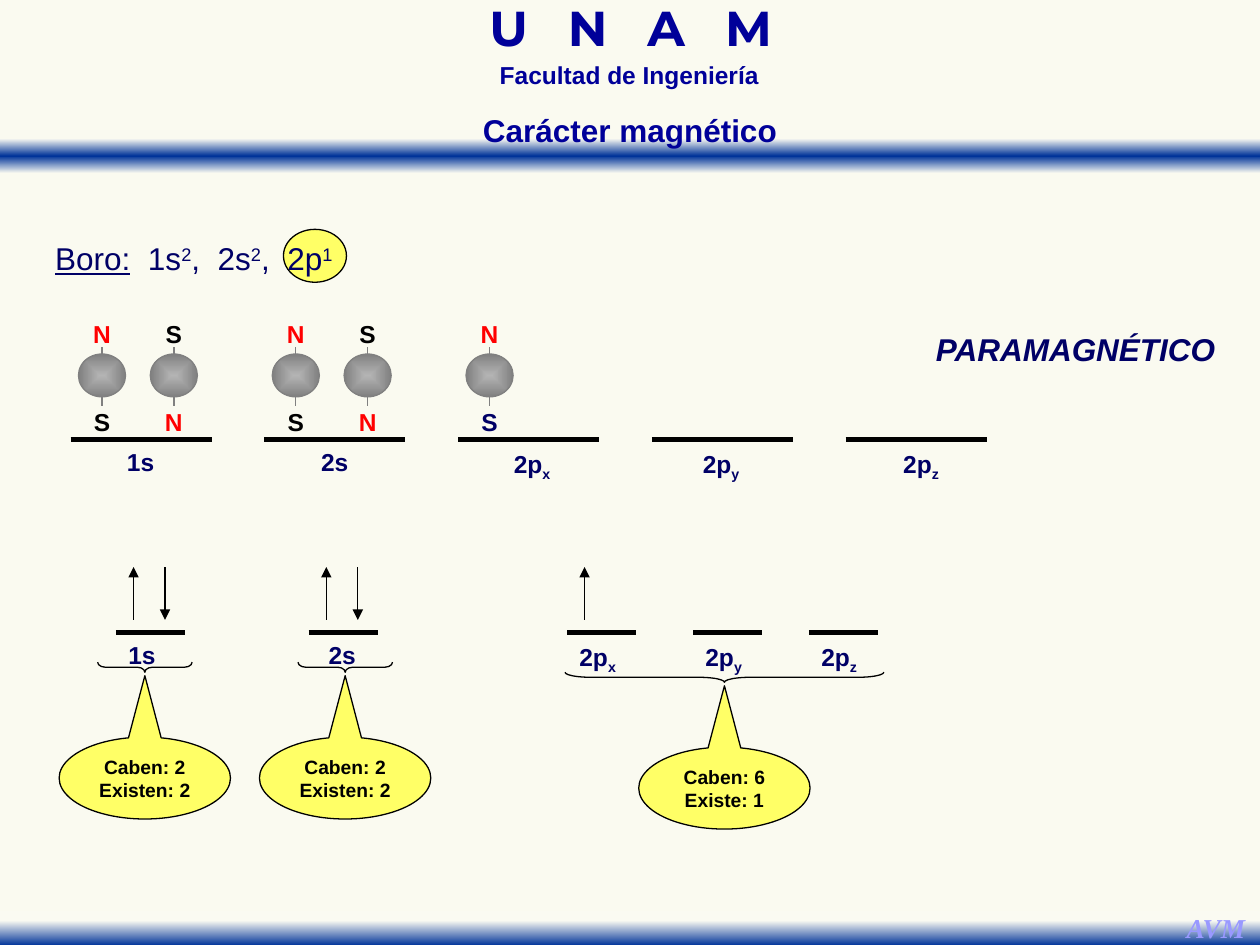
"""Build the slide on the magnetic character of boron, on a grid of 100 by 75 cells."""
from lxml import etree
from pptx import Presentation, util as u
from pptx.dml.color import RGBColor
from pptx.enum import shapes, text
from pptx.oxml.ns import qn

COLORS = {
    "paper": "FAFAF0", "fade": "FAFAF2", "band": "003399", "heading": "000099",
    "navy": "000066", "lilac": "9999FF", "yellow": "FFFF66", "black": "000000",
    "red": "FF0000", "light gray": "B4B4B4", "gray": "808080",
}
LEFT, CENTER = text.PP_ALIGN.LEFT, text.PP_ALIGN.CENTER
SUPER, SUB = {"baseline": "30000"}, {"baseline": "-25000"}
GAP = (" ", {"spc": "500"})


def cells(count):
    """Convert grid cells to a length."""
    return u.Inches(count / 10)


def color(name):
    """Look up a colour by name."""
    return RGBColor.from_string(COLORS[name])


def write(paragraph, runs, size, ink, font="Arial", bold=True, italic=False,
          align=LEFT, spacing=None):
    """Fill a paragraph with runs given as text and run attributes."""
    paragraph.alignment = align
    if spacing:
        paragraph.line_spacing = spacing
    for words, attributes in runs:
        run = paragraph.add_run()
        run.text = words
        for key, value in attributes.items():
            run.font._element.set(key, value)
    paragraph.font.name, paragraph.font.size = font, u.Pt(size)
    paragraph.font.bold, paragraph.font.italic = bold, italic
    paragraph.font.color.rgb = color(ink)


def add_text(slide, left, top, width, height, runs, size, ink, inset=1, **style):
    """Add a text box of one paragraph."""
    box = slide.shapes.add_textbox(*map(cells, (left, top, width, height)))
    frame = box.text_frame
    frame.word_wrap = True
    frame.margin_left = frame.margin_right = cells(inset)
    write(frame.paragraphs[0], runs, size, ink, **style)


def add_figure(slide, kind, left, top, width, height, fill=None, line=None):
    """Add a preset shape with a plain fill and a thin line."""
    shape = slide.shapes.add_shape(kind, *map(cells, (left, top, width, height)))
    shape.shadow.inherit = False
    if fill:
        shape.fill.solid()
        shape.fill.fore_color.rgb = color(fill)
    else:
        shape.fill.background()
    if line:
        shape.line.color.rgb = color(line)
        shape.line.width = u.Pt(0.75)
    else:
        shape.line.fill.background()
    return shape


def set_gradient(shape, stops, radial=False):
    """Replace a plain fill by a vertical or a centred gradient."""
    gradient = etree.Element(qn("a:gradFill"), rotWithShape="1")
    stop_list = etree.SubElement(gradient, qn("a:gsLst"))
    for position, name in stops:
        stop = etree.SubElement(stop_list, qn("a:gs"), pos=str(position * 1000))
        etree.SubElement(stop, qn("a:srgbClr"), val=COLORS[name])
    if radial:
        center = etree.SubElement(gradient, qn("a:path"), path="shape")
        etree.SubElement(center, qn("a:fillToRect"), l="50000", t="50000", r="50000", b="50000")
    else:
        etree.SubElement(gradient, qn("a:lin"), ang="5400000", scaled="1")
    properties = shape._element.spPr
    properties.replace(properties.find(qn("a:solidFill")), gradient)


def add_line(slide, start, end, width=0.75, ink="black", arrow=False):
    """Add a straight line, with an arrowhead at its end if asked."""
    line = slide.shapes.add_connector(
        shapes.MSO_CONNECTOR.STRAIGHT, *map(cells, (*start, *end)))
    line.line.color.rgb = color(ink)
    line.line.width = u.Pt(width)
    if arrow:
        etree.SubElement(line.line._get_or_add_ln(), qn("a:tailEnd"), type="triangle")
    etree.SubElement(line._element.spPr, qn("a:effectLst"))


def add_band(slide, top, stops):
    """Add a gradient band across the slide."""
    band = add_figure(slide, shapes.MSO_SHAPE.RECTANGLE, 0, top, 100, 2.75, "band")
    set_gradient(band, stops)


def add_orbital(slide, left, top, width, label_left, name):
    """Add an orbital's bar and its label, with the axis as a subscript."""
    add_line(slide, (left, top), (left + width, top), 3)
    add_text(slide, label_left, top - 1.1, 5.4, 4.5,
             [(name[:2], {}), (name[2:], SUB)], 14, "navy", spacing=1.5)


def add_magnet(slide, center, north_up, south_ink="black"):
    """Add an electron as a sphere with its two poles."""
    poles = [("N", "red"), ("S", south_ink)]
    if not north_up:
        poles.reverse()
    sphere = add_figure(slide, shapes.MSO_SHAPE.OVAL, center - 1.87, 28.1, 3.74, 3.4,
                        "gray", "gray")
    set_gradient(sphere, [(0, "light gray"), (100, "gray")], radial=True)
    for (pole, ink), edge, tip, top in zip(poles, (28.1, 31.5), (27.5, 32.2), (24.8, 31.8)):
        add_line(slide, (center, edge), (center, tip), ink="gray")
        add_text(slide, center - 1.5, top, 3, 3.3, [(pole, {})], 14, ink,
                 inset=0, align=CENTER)


def add_occupancy(slide, center, top, span, capacity, present):
    """Add a brace under orbitals and a callout with their electron count."""
    brace = add_figure(slide, shapes.MSO_SHAPE.LEFT_BRACE, center - 0.4,
                       top - 5.55 - span / 2, 0.8, span, line="black")
    brace.rotation = 270
    brace.adjustments[0], brace.adjustments[1] = span / 10, 0.5
    callout = add_figure(slide, shapes.MSO_SHAPE.OVAL_CALLOUT, center - 6.8, top,
                         13.6, 6.5, "yellow", "black")
    callout.adjustments[0], callout.adjustments[1] = 0, -1.25
    paragraph = callout.text_frame.paragraphs[0]
    write(paragraph, [(capacity, {})], 11, "black", align=CENTER)
    paragraph.add_line_break()
    paragraph.add_run().text = present


def add_title(slide, words):
    """Place the title above the band and in front of it."""
    title = slide.shapes.title
    title.left, title.top, title.width, title.height = map(cells, (28.3, 8.3, 43.4, 4))
    title.text_frame.vertical_anchor = text.MSO_ANCHOR.TOP
    write(title.text_frame.paragraphs[0], [(words, {})], 18, "heading", align=CENTER)
    slide.shapes._spTree.append(title._element)


def add_frame(slide):
    """Add the heading, the bands and the signature."""
    slide.background.fill.solid()
    slide.background.fill.fore_color.rgb = color("paper")
    add_band(slide, 11, [(0, "fade"), (50, "band"), (100, "fade")])
    add_text(slide, 30.5, 0.6, 39.1, 4.3, [("U N A M", {"spc": "750"})], 28, "heading",
             font="Montserrat", align=CENTER, spacing=0.7)
    add_text(slide, 32.1, 4.9, 35.7, 2.7, [("Facultad de Ingeniería", {})], 14, "heading",
             align=CENTER, spacing=0.7)
    add_band(slide, 72.3, [(28, "fade"), (100, "band")])
    add_text(slide, 93, 71.8, 7, 3.7, [("AVM", {})], 15.6, "lilac",
             font="Times New Roman", italic=True, inset=0, align=CENTER)


def main():
    """Build and save the slide."""
    presentation = Presentation()
    presentation.slide_width, presentation.slide_height = cells(100), cells(75)
    slide = presentation.slides.add_slide(presentation.slide_layouts[5])
    add_frame(slide)
    add_title(slide, "Carácter magnético")

    add_figure(slide, shapes.MSO_SHAPE.OVAL, 22.5, 18.2, 5, 4.2, "yellow", "black")
    configuration = [("Boro:", {"u": "sng"}), GAP, ("1s", {}), ("2", SUPER), (",", {}), GAP,
                     ("2s", {}), ("2", SUPER), (",", {}), GAP, ("2p", {}), ("1", SUPER)]
    add_text(slide, 3.4, 17, 26, 5.5, configuration, 18, "navy", bold=False, spacing=1.5)
    add_text(slide, 73.3, 24.2, 25.5, 5.5, [("PARAMAGNÉTICO", {})], 18, "navy",
             italic=True, spacing=1.5)

    names = ("1s", "2s", "2px", "2py", "2pz")
    for column, (name, label) in enumerate(zip(names, (9.1, 24.5, 39.8, 54.8, 70.7))):
        add_orbital(slide, 5.6 + 15.38 * column, 34.9, 11.2, label, name)
    for column in range(3):
        left = 5.6 + 15.38 * column
        add_magnet(slide, left + 2.5, True, "navy" if column == 2 else "black")
        if column < 2:
            add_magnet(slide, left + 8.2, False)

    bars = (9.2, 24.5, 45, 55, 64.2)
    for name, left, label in zip(names, bars, (9.2, 25.1, 45, 55, 64.2)):
        add_orbital(slide, left, 50.2, 5.5, label, name)
    for left in bars[:3]:
        add_line(slide, (left + 1.4, 49.2), (left + 1.4, 45), arrow=True)
    for left in bars[:2]:
        add_line(slide, (left + 3.9, 45), (left + 3.9, 49.2), arrow=True)

    for center in (11.5, 27.4):
        add_occupancy(slide, center, 58.5, 7.5, "Caben: 2", "Existen: 2")
    add_occupancy(slide, 57.5, 59.3, 25.3, "Caben: 6", "Existe: 1")
    presentation.save("out.pptx")


if __name__ == "__main__":
    main()
